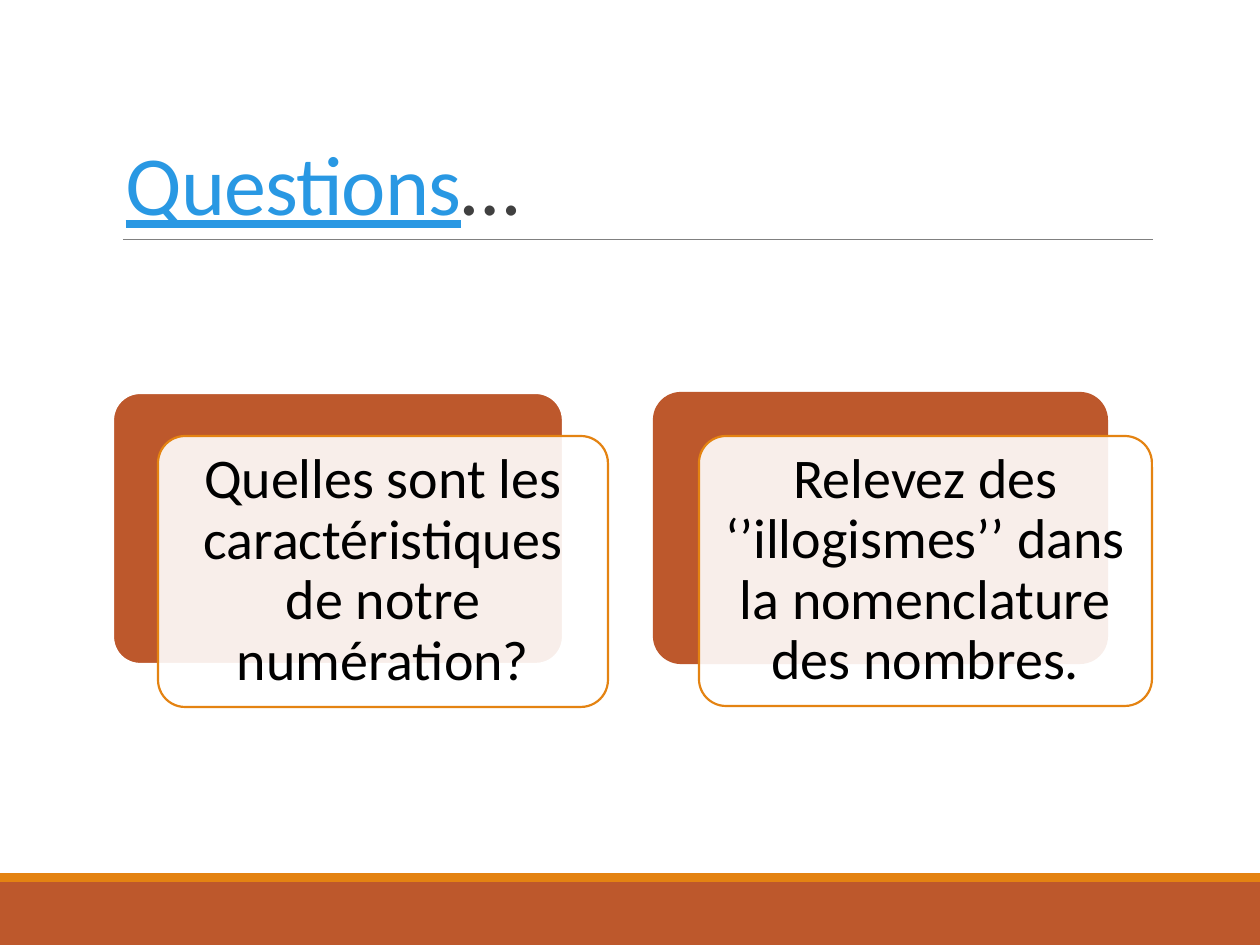
from lxml import etree
from pptx import Presentation
from pptx import util as u
from pptx.dml.color import RGBColor
from pptx.enum import shapes, text
from pptx.oxml import ns

# Content
TITLE = [("Questions", "link", True), ("…", "title", False)]
CARDS = [  # left, width, height, outline of the back plate, question
    (113, 450, 271, "white", "Quelles sont les caractéristiques de notre numération?"),
    (654, 453, 270, "rust", "Relevez des ‘’illogismes’’ dans la nomenclature des nombres."),
]
BANDS = [(882, 63, "rust"), (873, 9, "orange")]  # top, height, colour

# Format
COLOURS = {"rust": "BD582C", "orange": "E48312", "rule": "808080", "link": "2998E3",
           "title": "404040", "black": "000000", "white": "FFFFFF"}
PAGE_W, PAGE_H = 1260, 945
CARD_TOP, SHIFT_X, SHIFT_Y, INSET = 393, 45, 43, 16
TITLE_BOX = {"left": 113, "top": 39, "width": 1040, "height": 200}
TITLE_FONT = {"name": "Calibri", "size": u.Pt(48)}
CARD_FONT = {"name": "Calibri", "size": u.Pt(32)}
CARD_FRAME = {"word_wrap": True, "vertical_anchor": text.MSO_ANCHOR.MIDDLE}
CARD_PARA = {"alignment": text.PP_ALIGN.CENTER, "line_spacing": 0.9}


def px(length):
    return u.Emu(round(length * 914400 / 126))


def colour(name):
    return RGBColor.from_string(COLOURS[name])


def apply(target, values):
    for name, value in values.items():
        setattr(target, name, value)


def add_box(kind, left, top, width, height, fill, line=None):
    box = page.shapes.add_shape(kind, *map(px, (left, top, width, height)))
    box.shadow.inherit = False
    box.fill.solid()
    box.fill.fore_color.rgb = colour(fill)
    if line:
        box.line.color.rgb = colour(line)
        box.line.width = u.Pt(1.25)
    else:
        box.line.fill.background()
    return box


def add_plate(*place):
    plate = add_box(shapes.MSO_SHAPE.ROUNDED_RECTANGLE, *place)
    plate.adjustments[0] = 0.1
    return plate


deck = Presentation()
deck.slide_width, deck.slide_height = px(PAGE_W), px(PAGE_H)
page = deck.slides.add_slide(deck.slide_layouts[5])

# Footer bands
for top, height, fill in BANDS:
    add_box(shapes.MSO_SHAPE.RECTANGLE, 0, top, PAGE_W, height, fill)

# Rule under the title
rule = page.shapes.add_connector(shapes.MSO_CONNECTOR.STRAIGHT, px(123), px(239), px(1153), px(239))
rule.line.color.rgb = colour("rule")
rule.line.width = u.Pt(0.5)
etree.SubElement(rule.element.spPr, ns.qn("a:effectLst"))

# Title
title = page.shapes.title
apply(title, {side: px(length) for side, length in TITLE_BOX.items()})
apply(title.text_frame, {"word_wrap": True, "vertical_anchor": text.MSO_ANCHOR.BOTTOM,
                         "auto_size": text.MSO_AUTO_SIZE.NONE})
para = title.text_frame.paragraphs[0]
apply(para, {"alignment": text.PP_ALIGN.LEFT, "line_spacing": 0.85})
for words, tint, underline in TITLE:
    span = para.add_run()
    span.text = words
    apply(span.font, {**TITLE_FONT, "underline": underline})
    span.font.color.rgb = colour(tint)
    span.font._element.set("spc", "-50")

# Question cards: a back plate and a translucent front plate
for left, width, height, outline, question in CARDS:
    add_plate(left, CARD_TOP, width, height, "rust", outline)
    front = add_plate(left + SHIFT_X, CARD_TOP + SHIFT_Y, width, height, "white", "orange")
    tint = front.element.spPr.find(ns.qn("a:solidFill"))[0]
    etree.SubElement(tint, ns.qn("a:alpha"), val="90000")
    frame = front.text_frame
    apply(frame, CARD_FRAME)
    apply(frame, {f"margin_{side}": px(INSET) for side in ("left", "top", "right", "bottom")})
    para = frame.paragraphs[0]
    apply(para, CARD_PARA)
    span = para.add_run()
    span.text = question
    apply(span.font, CARD_FONT)
    span.font.color.rgb = colour("black")

deck.save("out.pptx")
